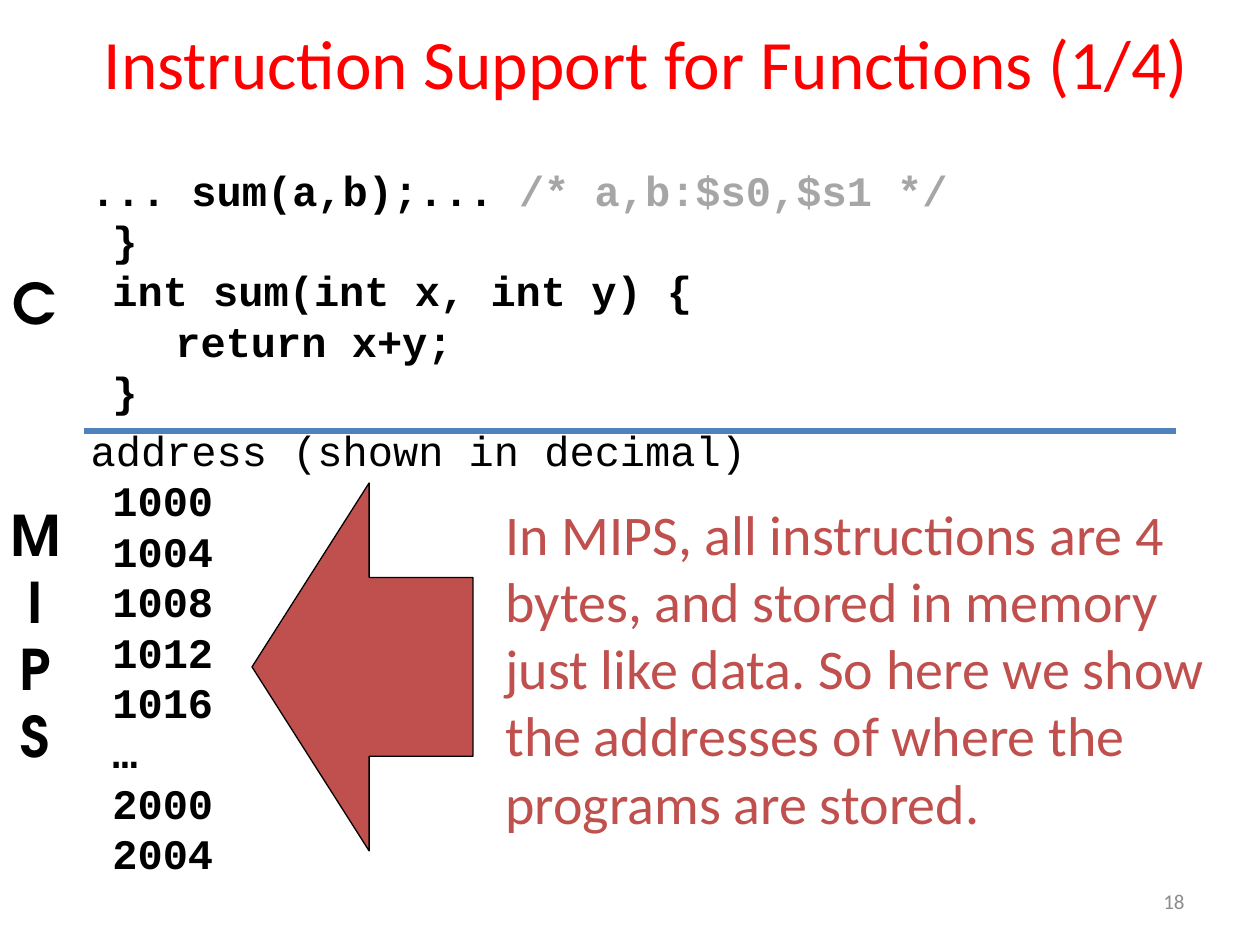
from dataclasses import dataclass

from pptx import Presentation
from pptx.dml.color import RGBColor
from pptx.enum.shapes import MSO_CONNECTOR, MSO_SHAPE
from pptx.enum.text import MSO_ANCHOR, PP_ALIGN
from pptx.oxml import parse_xml
from pptx.oxml.ns import nsdecls
from pptx.util import Emu, Pt


@dataclass(frozen=True)
class Theme:
    title: str = "FF0000"
    ink: str = "000000"
    comment: str = "A6A6A6"
    rule: str = "4F81BD"
    accent: str = "C0504D"
    number: str = "8C8C8C"
    sans: str = "Calibri"
    mono: str = "Courier New"
    label: str = "TeX Gyre Adventor"
    title_size: float = 39.6
    code_size: int = 24
    large_size: int = 32
    number_size: int = 12


THEME = Theme()
PX = 914400 // 126
SLIDE_SIZE = (1260, 945)

TITLE = "Instruction Support for Functions (1/4)"
CODE = [
    [
        (" ", False, THEME.ink),
        ("... sum(a,b);... ", True, THEME.ink),
        ("/* a,b:$s0,$s1 */\n", True, THEME.comment),
        ("}\nint sum(int x, int y) {\n\treturn x+y;\n}", True, THEME.ink),
    ],
    [
        (" address (shown in decimal)\n", False, THEME.ink),
        ("1000 \n1004 \n1008 \n1012 \n1016 \n…\n2000 \n2004", True, THEME.ink),
    ],
]
LABELS = [("C", (0, 262, 63, 81), PP_ALIGN.LEFT), ("M\nI\nP\nS", (-3, 494, 77, 285), PP_ALIGN.CENTER)]
NOTE = (
    "In MIPS, all instructions are 4 bytes, and stored in memory just like data. "
    "So here we show the addresses of where the programs are stored."
)
PAGE_NUMBER = "18"


def px(*lengths):
    return [Emu(length * PX) for length in lengths]


def add_text(paragraph, text, font, size, color, bold=False):
    for index, line in enumerate(text.split("\n")):
        if index:
            paragraph.add_line_break()
        if line:
            run = paragraph.add_run()
            run.text = line
            run.font.name = font
            run.font.size = Pt(size)
            run.font.bold = bold
            run.font.color.rgb = RGBColor.from_string(color)


def add_box(slide, box, wrap=True, anchor=MSO_ANCHOR.TOP):
    frame = slide.shapes.add_textbox(*px(*box)).text_frame
    frame.word_wrap = wrap
    frame.vertical_anchor = anchor
    return frame


def add_line_of_text(slide, box, text, font, size, color, align=PP_ALIGN.LEFT, bold=False, **layout):
    paragraph = add_box(slide, box, **layout).paragraphs[0]
    paragraph.alignment = align
    add_text(paragraph, text, font, size, color, bold)


def add_code(slide):
    frame = add_box(slide, (53, 158, 1207, 748))
    for index, runs in enumerate(CODE):
        paragraph = frame.add_paragraph() if index else frame.paragraphs[0]
        paragraph.space_before = Pt(THEME.code_size * 0.2)
        properties = paragraph._p.get_or_add_pPr()
        indent = 47 * PX
        properties.set("marL", str(indent))
        properties.set("indent", str(-indent))
        for text, bold, color in runs:
            add_text(paragraph, text, THEME.mono, THEME.code_size, color, bold)


def add_rule(slide):
    rule = slide.shapes.add_connector(MSO_CONNECTOR.STRAIGHT, *px(84, 431, 1176, 431))
    rule.line.color.rgb = RGBColor.from_string(THEME.rule)
    rule.line.width = Pt(3)
    rule._element.spPr.append(parse_xml(f"<a:effectLst {nsdecls('a')}/>"))


def add_arrow(slide):
    arrow = slide.shapes.add_shape(MSO_SHAPE.LEFT_ARROW, *px(252, 483, 221, 368))
    arrow.adjustments[0], arrow.adjustments[1] = 0.486, 0.53
    arrow.shadow.inherit = False
    arrow.fill.solid()
    arrow.fill.fore_color.rgb = RGBColor.from_string(THEME.accent)
    arrow.line.color.rgb = RGBColor.from_string(THEME.ink)
    arrow.line.width = Pt(0.75)


def main():
    """Build the slide on instruction support for functions."""
    presentation = Presentation()
    presentation.slide_width, presentation.slide_height = px(*SLIDE_SIZE)
    slide = presentation.slides.add_slide(presentation.slide_layouts[6])
    add_line_of_text(
        slide, (84, 29, 1124, 66), TITLE, THEME.sans, THEME.title_size, THEME.title,
        PP_ALIGN.CENTER, anchor=MSO_ANCHOR.MIDDLE,
    )
    add_code(slide)
    add_rule(slide)
    for text, box, align in LABELS:
        add_line_of_text(slide, box, text, THEME.label, THEME.large_size, THEME.ink, align, bold=True, wrap=False)
    add_line_of_text(slide, (493, 493, 766, 352), NOTE, THEME.sans, THEME.large_size, THEME.accent)
    add_arrow(slide)
    add_line_of_text(
        slide, (903, 876, 294, 50), PAGE_NUMBER, THEME.sans, THEME.number_size, THEME.number,
        PP_ALIGN.RIGHT, anchor=MSO_ANCHOR.MIDDLE,
    )
    presentation.save("out.pptx")


if __name__ == "__main__":
    main()
